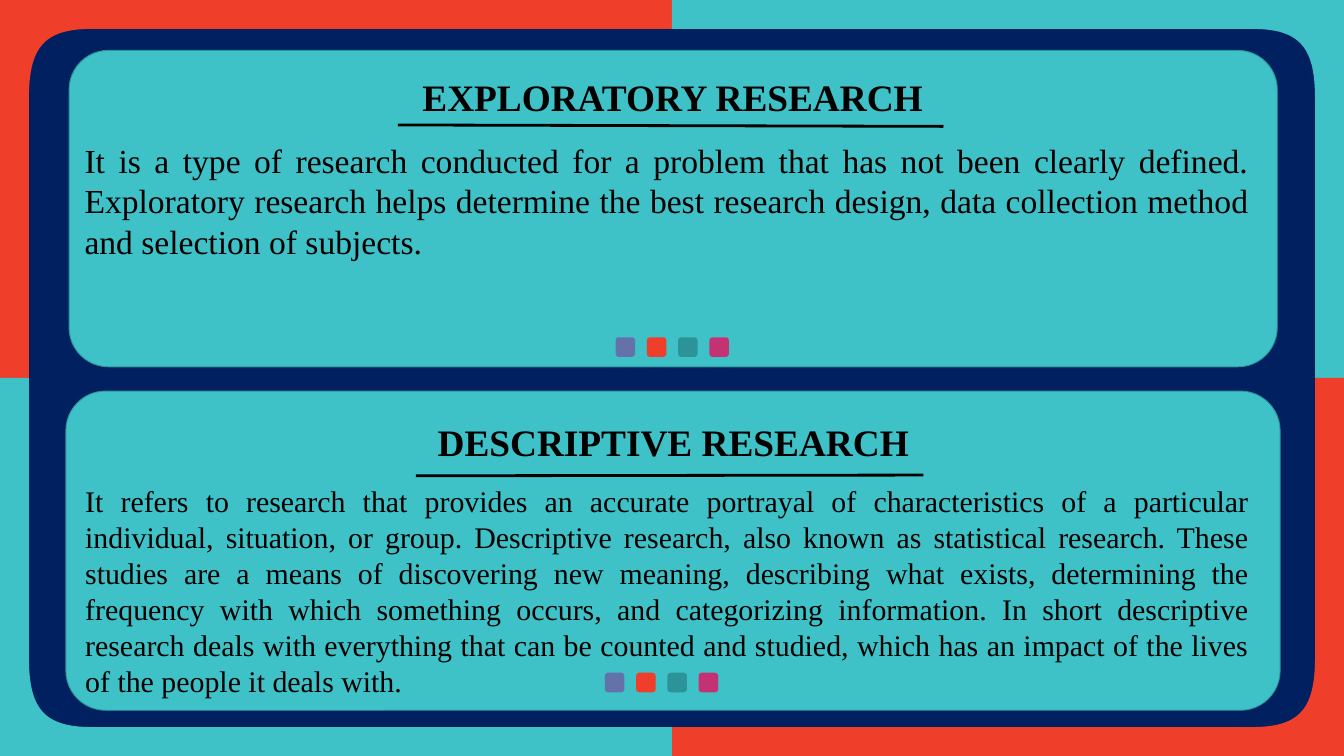
from dataclasses import dataclass

from lxml import etree
from pptx import Presentation
from pptx.dml.color import RGBColor
from pptx.enum.shapes import MSO_CONNECTOR, MSO_SHAPE
from pptx.enum.text import MSO_AUTO_SIZE, PP_ALIGN
from pptx.oxml.ns import qn
from pptx.util import Pt


@dataclass(frozen=True)
class Theme:
    font: str = "Times New Roman"
    navy: RGBColor = RGBColor.from_string("002060")
    turquoise: RGBColor = RGBColor.from_string("3EC2C7")
    red: RGBColor = RGBColor.from_string("EF3E2A")
    teal: RGBColor = RGBColor.from_string("2C9498")
    violet: RGBColor = RGBColor.from_string("6572AA")
    magenta: RGBColor = RGBColor.from_string("C43273")
    black: RGBColor = RGBColor.from_string("000000")
    heading: int = 40


theme = Theme()
W, H = 1440, 810

prs = Presentation()
prs.slide_width, prs.slide_height = Pt(W), Pt(H)
s = prs.slides.add_slide(prs.slide_layouts[6])
s.background.fill.solid()
s.background.fill.fore_color.rgb = theme.navy


def add_box(box, color, line=None):
    sp = s.shapes.add_shape(MSO_SHAPE.ROUNDED_RECTANGLE, *[Pt(v) for v in box])
    sp.shadow.inherit = False
    sp.fill.solid()
    sp.fill.fore_color.rgb = color
    if line is None:
        sp.line.fill.background()
    else:
        sp.line.color.rgb = line
        sp.line.width = Pt(1)
    return sp


def add_text(box, text, size, align, spacing, bold=False):
    tf = s.shapes.add_textbox(*[Pt(v) for v in box]).text_frame
    tf.word_wrap = True
    tf.auto_size = MSO_AUTO_SIZE.SHAPE_TO_FIT_TEXT
    p = tf.paragraphs[0]
    p.text = text
    p.alignment = align
    p.line_spacing = Pt(spacing)
    r = p.runs[0]
    r.font.name = theme.font
    r.font.size = Pt(size)
    r.font.bold = bold
    r.font.color.rgb = theme.black


# Four corner quarters, each cut by the rounded navy frame
start, c1, c2, end = (98, 31), (46, 31), (31, 52), (31, 106)
curve = []
for i in range(25):
    t = i / 24
    weights = ((1 - t) ** 3, 3 * t * (1 - t) ** 2, 3 * t * t * (1 - t), t ** 3)
    curve.append(tuple(sum(w * pt[axis] for w, pt in zip(weights, (start, c1, c2, end)))
                       for axis in (0, 1)))
quarter = [(0, H / 2), (0, 0), (W / 2, 0), (W / 2, 31), *curve, (31, H / 2)]
for right, bottom, color in [(False, False, theme.red), (True, False, theme.turquoise),
                             (True, True, theme.red), (False, True, theme.turquoise)]:
    points = [(Pt(W - x if right else x), Pt(H - y if bottom else y)) for x, y in quarter]
    fb = s.shapes.build_freeform(*points[0])
    fb.add_line_segments(points[1:], close=True)
    sp = fb.convert_to_shape()
    sp.shadow.inherit = False
    sp.fill.solid()
    sp.fill.fore_color.rgb = color
    sp.line.fill.background()

# Two panels: card, heading, rule, body and a row of dots
panels = [
    dict(card=(74, 54, 1294.5, 339), heading="EXPLORATORY RESEARCH",
         heading_box=(89.3, 89.3, 1262.9, 42.5), rule=(426.2, 133.9, 1010.9, 135.4),
         body="It is a type of research conducted for a problem that has not been clearly "
              "defined. Exploratory research helps determine the best research design, data "
              "collection method and selection of subjects.",
         body_box=(83.5, 146.2, 1262.2, 138.2), size=36, dots=(659.5, 361.4)),
    dict(card=(70.6, 419, 1301, 342), heading="DESCRIPTIVE RESEARCH",
         heading_box=(90, 459.4, 1262.9, 42.5), rule=(445.7, 509.8, 989.3, 509),
         body="It refers to research that provides an accurate portrayal of characteristics "
              "of a particular individual, situation, or group. Descriptive research, also "
              "known as statistical research. These studies are a means of discovering new "
              "meaning, describing what exists, determining the frequency with which "
              "something occurs, and categorizing information. In short descriptive research "
              "deals with everything that can be counted and studied, which has an impact of "
              "the lives of the people it deals with.",
         body_box=(84.2, 514.1, 1262.2, 239.8), size=32, dots=(648, 720.7)),
]
dot_colors = [theme.violet, theme.red, theme.teal, theme.magenta]
dot_size, dot_pitch = 21, 33.5

for panel in panels:
    card = add_box(panel["card"], theme.turquoise, theme.teal)
    card.adjustments[0] = 0.124

    left, top = panel["dots"]
    for i, color in enumerate(dot_colors):
        add_box((left + i * dot_pitch, top, dot_size, dot_size), color)

    add_text(panel["heading_box"], panel["heading"], theme.heading, PP_ALIGN.CENTER, 34.2, True)
    add_text(panel["body_box"], panel["body"], panel["size"], PP_ALIGN.JUSTIFY,
             panel["size"] * 1.2)

    rule = s.shapes.add_connector(MSO_CONNECTOR.STRAIGHT, *[Pt(v) for v in panel["rule"]])
    rule.line.color.rgb = theme.black
    rule.line.width = Pt(3)
    etree.SubElement(rule.line._get_or_add_ln().getparent(), qn("a:effectLst"))

prs.save("out.pptx")
